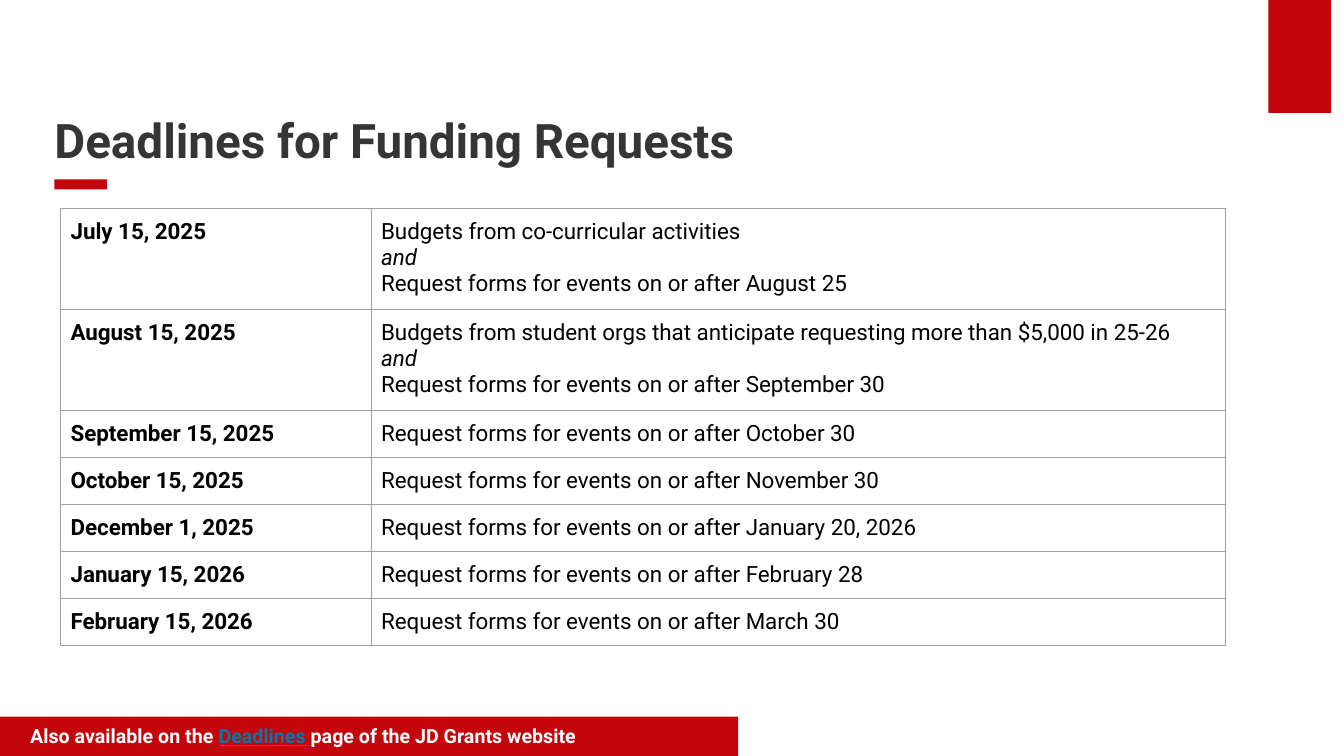
from lxml import etree
from pptx import Presentation
from pptx.dml.color import RGBColor
from pptx.enum.shapes import MSO_SHAPE
from pptx.enum.text import MSO_ANCHOR, PP_ALIGN
from pptx.oxml.ns import qn
from pptx.util import Inches, Pt

RECTANGLE = MSO_SHAPE.RECTANGLE
BOTTOM, MIDDLE = MSO_ANCHOR.BOTTOM, MSO_ANCHOR.MIDDLE
LEFT = PP_ALIGN.LEFT

# Content
HEADING = "Deadlines for Funding Requests"
REQUESTS = "Request forms for events on or after "
DEADLINES = [
    ("July 15, 2025",
     ["Budgets from co-curricular activities", "and", REQUESTS + "August 25"]),
    ("August 15, 2025",
     ["Budgets from student orgs that anticipate requesting more than $5,000 in 25-26",
      "and", REQUESTS + "September 30"]),
    ("September 15, 2025", [REQUESTS + "October 30"]),
    ("October 15, 2025", [REQUESTS + "November 30"]),
    ("December 1, 2025", [REQUESTS + "January 20, 2026"]),
    ("January 15, 2026", [REQUESTS + "February 28"]),
    ("February 15, 2026", [REQUESTS + "March 30"]),
]
RED, WHITE, BLACK = "C5050C", "FFFFFF", "000000"
CHARCOAL, LINK_BLUE, RULE_GREY = "353535", "0479A8", "9E9E9E"
FOOTER = [("Also available on the ", WHITE, False),
          ("Deadlines ", LINK_BLUE, True),
          ("page of the JD Grants website", WHITE, False)]
FONT = "Roboto"
COLUMN_WIDTHS = (3.08, 8.47)
LINE_HEIGHT, CELL_PADDING = 0.26, 0.1


def rgb(hex_code):
    return RGBColor.from_string(hex_code)


def style(font, size, color=None, bold=False, italic=False):
    font.name, font.size, font.bold, font.italic = FONT, Pt(size), bold, italic
    if color:
        font.color.rgb = rgb(color)


def set_margins(frame, left, top, right, bottom):
    frame.margin_left, frame.margin_top = Inches(left), Inches(top)
    frame.margin_right, frame.margin_bottom = Inches(right), Inches(bottom)


def red_block(left, top, width, height):
    block = slide.shapes.add_shape(
        RECTANGLE, Inches(left), Inches(top), Inches(width), Inches(height))
    block.shadow.inherit = False
    block.fill.solid()
    block.fill.fore_color.rgb = rgb(RED)
    block.line.fill.background()
    return block


def fill_cell(cell, lines, bold=False):
    set_margins(cell, *[CELL_PADDING] * 4)
    frame = cell.text_frame
    frame.text = "\n".join(lines)
    for paragraph in frame.paragraphs:
        style(paragraph.font, 16, BLACK, bold, paragraph.text == "and")
    # Borders come before the fill in the cell properties
    properties = cell._tc.get_or_add_tcPr()
    for side in ("a:lnL", "a:lnR", "a:lnT", "a:lnB"):
        border = etree.SubElement(properties, qn(side), w=str(Pt(0.75)))
        paint = etree.SubElement(border, qn("a:solidFill"))
        etree.SubElement(paint, qn("a:srgbClr"), val=RULE_GREY)
    cell.fill.background()


prs = Presentation()
prs.slide_width, prs.slide_height = Inches(13.33), Inches(7.5)
slide = prs.slides.add_slide(prs.slide_layouts[6])

# Corner block and accent under the heading
red_block(12.58, 0, 0.62, 1.12)
red_block(0.54, 1.78, 0.52, 0.1)

# Heading
heading = slide.shapes.add_textbox(
    Inches(0.54), Inches(0.5), Inches(11.67), Inches(1.17)).text_frame
heading.word_wrap = True
heading.vertical_anchor = BOTTOM
set_margins(heading, 0, 0.05, 0.1, 0)
heading.text = HEADING
heading.paragraphs[0].line_spacing = 0.9
style(heading.paragraphs[0].font, 34, CHARCOAL, bold=True)

# Footer band
footer = red_block(0, 7.11, 7.32, 0.41).text_frame
footer.word_wrap = True
footer.vertical_anchor = MIDDLE
set_margins(footer, 0.3, 0.07, 0.2, 0.1)
note = footer.paragraphs[0]
note.alignment = LEFT
style(note.font, 14, bold=True)
for words, color, underlined in FOOTER:
    run = note.add_run()
    run.text = words
    run.font.color.rgb = rgb(color)
    run.font.underline = underlined

# Deadline table, each row as tall as its lines
row_heights = [LINE_HEIGHT * len(lines) + 2 * CELL_PADDING for _, lines in DEADLINES]
schedule = slide.shapes.add_table(
    len(DEADLINES), len(COLUMN_WIDTHS), Inches(0.6), Inches(2.07),
    Inches(sum(COLUMN_WIDTHS)), Inches(sum(row_heights))).table
schedule.first_row = schedule.horz_banding = False
for column, width in zip(schedule.columns, COLUMN_WIDTHS):
    column.width = Inches(width)
for row, height, (date, lines) in zip(schedule.rows, row_heights, DEADLINES):
    row.height = Inches(height)
    fill_cell(row.cells[0], [date], bold=True)
    fill_cell(row.cells[1], lines)

prs.save("out.pptx")
